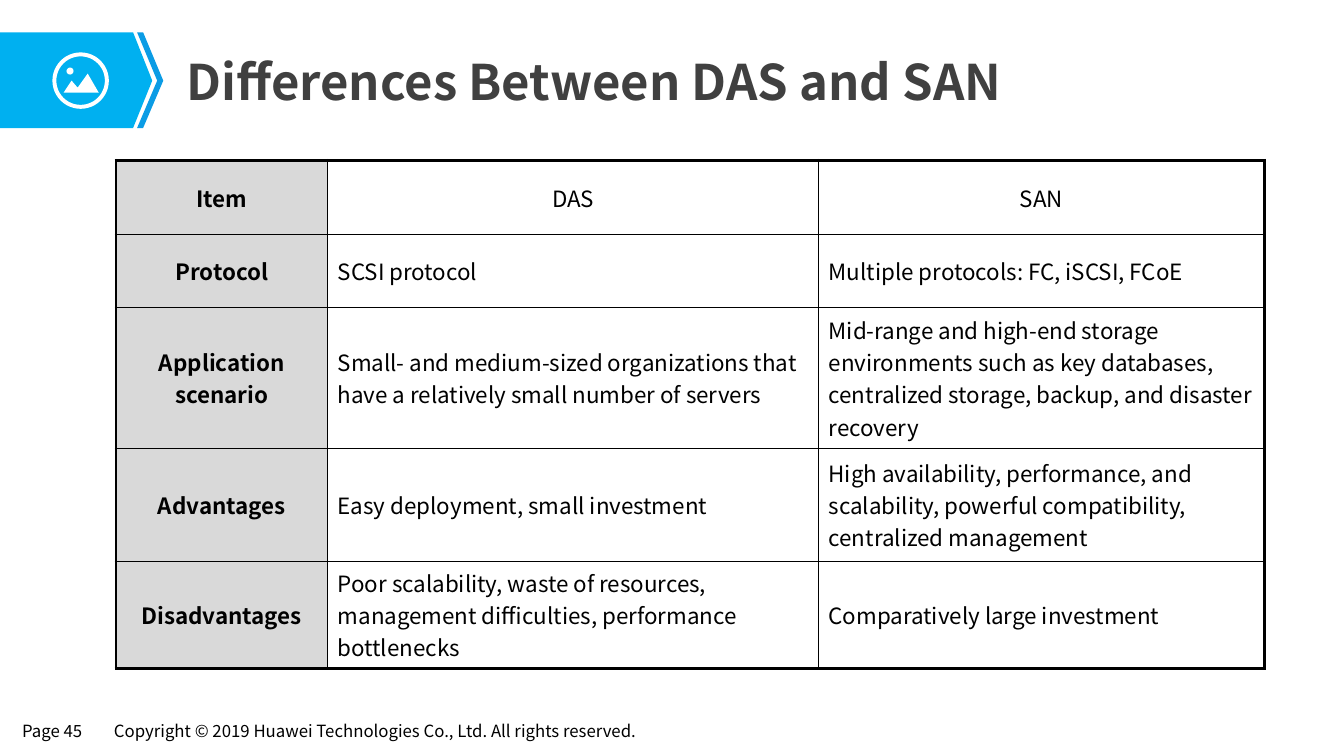
from lxml import etree
from pptx import Presentation
from pptx.dml.color import RGBColor
from pptx.enum.shapes import MSO_SHAPE
from pptx.enum.text import MSO_ANCHOR, PP_ALIGN
from pptx.oxml.ns import qn
from pptx.util import Pt

PX = 9144
FONT = "Noto Sans CJK SC"
BLACK = RGBColor(0x00, 0x00, 0x00)
WHITE = RGBColor(0xFF, 0xFF, 0xFF)
TITLE_GRAY = RGBColor(0x40, 0x40, 0x40)
HEADER_GRAY = RGBColor(0xD9, 0xD9, 0xD9)
BLUE = RGBColor(0x00, 0xB0, 0xF0)
DEEP_BLUE = RGBColor(0x0B, 0x9C, 0xE5)
MIDDLE = MSO_ANCHOR.MIDDLE
CENTER, LEFT = PP_ALIGN.CENTER, PP_ALIGN.LEFT
OVAL, DONUT = MSO_SHAPE.OVAL, MSO_SHAPE.DONUT

COLUMN_WIDTHS = (210, 487, 442)
ROW_HEIGHTS = (74, 72, 140, 112, 106)
ROWS = (
    ("Item", "DAS", "SAN"),
    ("Protocol", "SCSI protocol", "Multiple protocols: FC, iSCSI, FCoE"),
    ("Application scenario",
     "Small- and medium-sized organizations that have a relatively small "
     "number of servers",
     "Mid-range and high-end storage environments such as key databases, "
     "centralized storage, backup, and disaster recovery"),
    ("Advantages", "Easy deployment, small investment",
     "High availability, performance, and scalability, powerful "
     "compatibility, centralized management"),
    ("Disadvantages",
     "Poor scalability, waste of resources, management difficulties, "
     "performance bottlenecks",
     "Comparatively large investment"),
)


def add_run(p, text, size, color=BLACK, bold=False):
    r = p.add_run()
    r.text = text
    r.font.name = FONT
    r.font.size = Pt(size)
    r.font.bold = bold
    r.font.color.rgb = color


def add_text(s, box, text, size, color=BLACK, bold=False, inset=9, wrap=True):
    sp = s.shapes.add_textbox(*(v * PX for v in box))
    tf = sp.text_frame
    tf.word_wrap = wrap
    tf.vertical_anchor = MIDDLE
    tf.margin_left = tf.margin_right = inset * PX
    tf.margin_top = tf.margin_bottom = 0
    add_run(tf.paragraphs[0], text, size, color, bold)


def paint(sp, color):
    sp.fill.solid()
    sp.fill.fore_color.rgb = color
    sp.line.fill.background()
    sp.shadow.inherit = False


def add_polygon(s, points, color):
    builder = s.shapes.build_freeform(*points[0], scale=PX)
    builder.add_line_segments(points[1:], close=True)
    paint(builder.convert_to_shape(), color)


def add_preset(s, kind, box, color):
    sp = s.shapes.add_shape(kind, *(v * PX for v in box))
    paint(sp, color)
    return sp


def add_title_badge(s):
    add_polygon(s, [(0, 32), (132, 32), (151, 80), (132, 127), (0, 127)], BLUE)
    add_polygon(s, [(136, 32), (142, 32), (162, 80), (142, 127), (136, 127),
                    (156, 80)], DEEP_BLUE)
    ring = add_preset(s, DONUT, (52, 52, 56, 56), WHITE)
    ring.adjustments[0] = 0.07
    add_preset(s, OVAL, (66, 67, 7, 7), WHITE)
    add_polygon(s, [(63, 92), (71, 80), (77, 87), (87, 73), (98, 92)], WHITE)


def set_borders(cell, widths):
    tcPr = cell._tc.get_or_add_tcPr()
    for i, (tag, width) in enumerate(zip(("a:lnL", "a:lnR", "a:lnT", "a:lnB"), widths)):
        ln = etree.Element(qn(tag), w=str(Pt(width)))
        fill = etree.SubElement(ln, qn("a:solidFill"))
        etree.SubElement(fill, qn("a:srgbClr"), val=str(BLACK))
        tcPr.insert(i, ln)


def add_comparison_table(s):
    last_row, last_col = len(ROWS) - 1, len(COLUMN_WIDTHS) - 1
    table = s.shapes.add_table(
        len(ROWS), len(COLUMN_WIDTHS), 115 * PX, 159 * PX,
        sum(COLUMN_WIDTHS) * PX, sum(ROW_HEIGHTS) * PX).table
    table.first_row = table.horz_banding = False
    for column, width in zip(table.columns, COLUMN_WIDTHS):
        column.width = width * PX
    for row, height in zip(table.rows, ROW_HEIGHTS):
        row.height = height * PX
    for i, texts in enumerate(ROWS):
        for j, text in enumerate(texts):
            cell = table.cell(i, j)
            cell.vertical_anchor = MIDDLE
            if j == 0:
                cell.fill.solid()
                cell.fill.fore_color.rgb = HEADER_GRAY
            else:
                cell.fill.background()
            edges = (j == 0, j == last_col, i == 0, i == last_row)
            set_borders(cell, [2.25 if outer else 1 for outer in edges])
            p = cell.text_frame.paragraphs[0]
            p.alignment = CENTER if i == 0 or j == 0 else LEFT
            add_run(p, text, 16, bold=j == 0)


def main():
    prs = Presentation()
    prs.slide_width, prs.slide_height = 1333 * PX, 750 * PX
    s = prs.slides.add_slide(prs.slide_layouts[6])
    add_text(s, (13, 710, 84, 29), "Page 45", 12, wrap=False)
    add_text(s, (104, 710, 566, 29),
             "Copyright © 2019 Huawei Technologies Co., Ltd. All rights reserved.",
             12, wrap=False)
    add_title_badge(s)
    add_text(s, (174, 45, 1075, 71), "Differences Between DAS and SAN", 35,
             TITLE_GRAY, bold=True, inset=11)
    add_comparison_table(s)
    prs.save("out.pptx")


if __name__ == "__main__":
    main()
